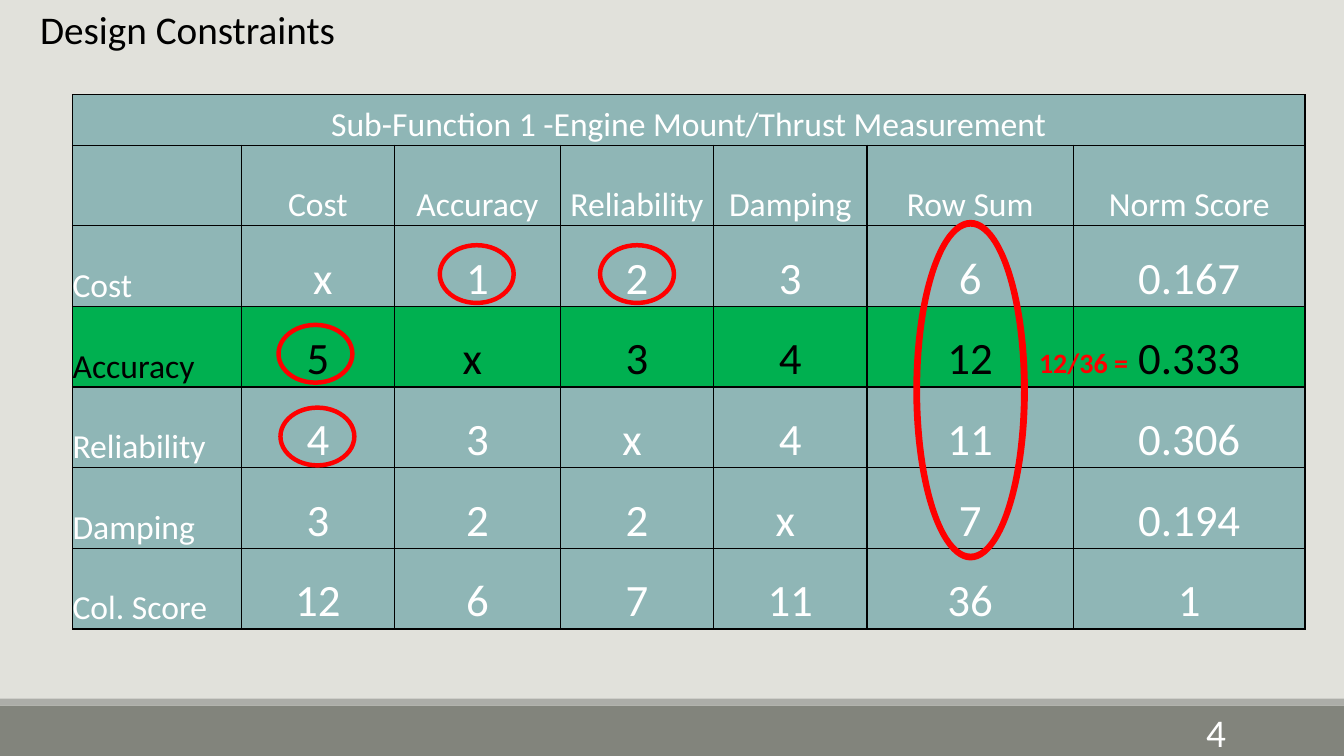
from lxml import etree
from pptx import Presentation
from pptx.dml.color import RGBColor
from pptx.enum.shapes import MSO_SHAPE
from pptx.enum.text import MSO_ANCHOR, PP_ALIGN
from pptx.oxml.ns import qn
from pptx.util import Pt

RECTANGLE, DONUT = MSO_SHAPE.RECTANGLE, MSO_SHAPE.DONUT
LEFT, CENTER, RIGHT = PP_ALIGN.LEFT, PP_ALIGN.CENTER, PP_ALIGN.RIGHT
TOP, MIDDLE, BOTTOM = MSO_ANCHOR.TOP, MSO_ANCHOR.MIDDLE, MSO_ANCHOR.BOTTOM

COLORS = {
    "background": "E1E1DB", "footer": "82847C", "footer_edge": "ACADA8",
    "cell": "8FB6B6", "highlight": "00B050", "mark": "FF0000",
    "black": "000000", "white": "FFFFFF",
}
WIDTH, HEIGHT = 960, 540
TABLE_LEFT, TABLE_TOP = 51.84, 67.68
COLUMN_WIDTHS = [120.5, 109.5, 118.5, 109.5, 109.5, 147.5, 165.5]
ROW_HEIGHTS = [36] + [57.6] * 6
HIGHLIGHT_ROW = 3
TABLE_TITLE = "Sub-Function 1 -Engine Mount/Thrust Measurement"
# The x entries carry a no-break space, as typed in the table.
ROWS = [
    [TABLE_TITLE],
    ["", "Cost", "Accuracy", "Reliability", "Damping", "Row Sum", "Norm Score"],
    ["Cost", " x", "1", "2", "3", "6", "0.167"],
    ["Accuracy", "5", "x ", "3", "4", "12", "0.333"],
    ["Reliability", "4", "3", "x ", "4", "11", "0.306"],
    ["Damping", "3", "2", "2", "x ", "7", "0.194"],
    ["Col. Score", "12", "6", "7", "11", "36", "1"],
]
SMALL_RINGS = [(313.2, 174.2), (198, 231.1), (427.7, 174.2), (199.4, 290.2)]


class SlideBuilder:
    font = "Calibri"

    def __init__(self, deck):
        self.slide = deck.slides.add_slide(deck.slide_layouts[6])
        self.paint(self.slide.background.fill, "background")

    def paint(self, fill, color):
        fill.solid()
        fill.fore_color.rgb = RGBColor.from_string(COLORS[color])

    def add_span(self, frame, text, size, color, align, bold=False):
        para = frame.paragraphs[0]
        para.alignment = align
        span = para.add_run()
        span.text = text
        span.font.name = self.font
        span.font.size = Pt(size)
        span.font.bold = bold
        span.font.color.rgb = RGBColor.from_string(COLORS[color])

    def text(self, left, top, width, height, text, size, color,
             align=LEFT, anchor=TOP, bold=False):
        box = self.slide.shapes.add_textbox(Pt(left), Pt(top), Pt(width), Pt(height))
        box.text_frame.word_wrap = True
        box.text_frame.vertical_anchor = anchor
        self.add_span(box.text_frame, text, size, color, align, bold)

    def shape(self, kind, left, top, width, height, color):
        shape = self.slide.shapes.add_shape(kind, Pt(left), Pt(top), Pt(width), Pt(height))
        shape.shadow.inherit = False
        self.paint(shape.fill, color)
        shape.line.fill.background()
        return shape

    def ring(self, left, top, width, height):
        ring = self.shape(DONUT, left, top, width, height, "mark")
        ring.adjustments[0] = 0.045
        self.paint(ring.line.fill, "mark")
        ring.line.width = Pt(1.25)

    def border(self, cell):
        properties = cell._tc.get_or_add_tcPr()
        for index, side in enumerate(("a:lnL", "a:lnR", "a:lnT", "a:lnB")):
            line = etree.Element(qn(side), w=str(Pt(1)))
            fill = etree.SubElement(line, qn("a:solidFill"))
            etree.SubElement(fill, qn("a:srgbClr"), val=COLORS["black"])
            properties.insert(index, line)

    def cell(self, cell, text, size, color, fill, align):
        cell.margin_left = cell.margin_right = cell.margin_top = cell.margin_bottom = 0
        cell.vertical_anchor = BOTTOM
        self.paint(cell.fill, fill)
        self.border(cell)
        if text:
            self.add_span(cell.text_frame, text, size, color, align)

    def score_table(self):
        table = self.slide.shapes.add_table(
            len(ROW_HEIGHTS), len(COLUMN_WIDTHS), Pt(TABLE_LEFT), Pt(TABLE_TOP),
            Pt(sum(COLUMN_WIDTHS)), Pt(sum(ROW_HEIGHTS))).table
        table.first_row = table.horz_banding = False
        for column, width in zip(table.columns, COLUMN_WIDTHS):
            column.width = Pt(width)
        for row, height in zip(table.rows, ROW_HEIGHTS):
            row.height = Pt(height)
        last_column = len(COLUMN_WIDTHS) - 1
        table.cell(0, 0).merge(table.cell(0, last_column))
        for r, values in enumerate(ROWS):
            marked = r == HIGHLIGHT_ROW
            for c in range(last_column + 1):
                self.cell(
                    table.cell(r, c),
                    values[c] if c < len(values) else "",
                    32 if r > 1 and c > 0 else 24,
                    "black" if marked else "white",
                    "highlight" if marked else "cell",
                    LEFT if r > 1 and c == 0 else CENTER)


def main():
    deck = Presentation()
    deck.slide_width, deck.slide_height = Pt(WIDTH), Pt(HEIGHT)
    page = SlideBuilder(deck)
    page.shape(RECTANGLE, 0, 504, WIDTH, 36, "footer")
    page.shape(RECTANGLE, 0, 499, WIDTH, 5, "footer_edge")
    page.score_table()
    page.text(21.6, 0, 329, 41, "Design Constraints", 28, "black")
    page.text(779.8, 508.3, 103, 28.8, "4", 28, "white", RIGHT, MIDDLE)
    for left, top in SMALL_RINGS:
        page.ring(left, top, 54.7, 43.2)
    page.ring(653, 157.7, 80.6, 242)
    page.text(735.1, 243.4, 89.3, 31.7, "12/36 =", 20, "mark", bold=True)
    deck.save("out.pptx")


if __name__ == "__main__":
    main()
